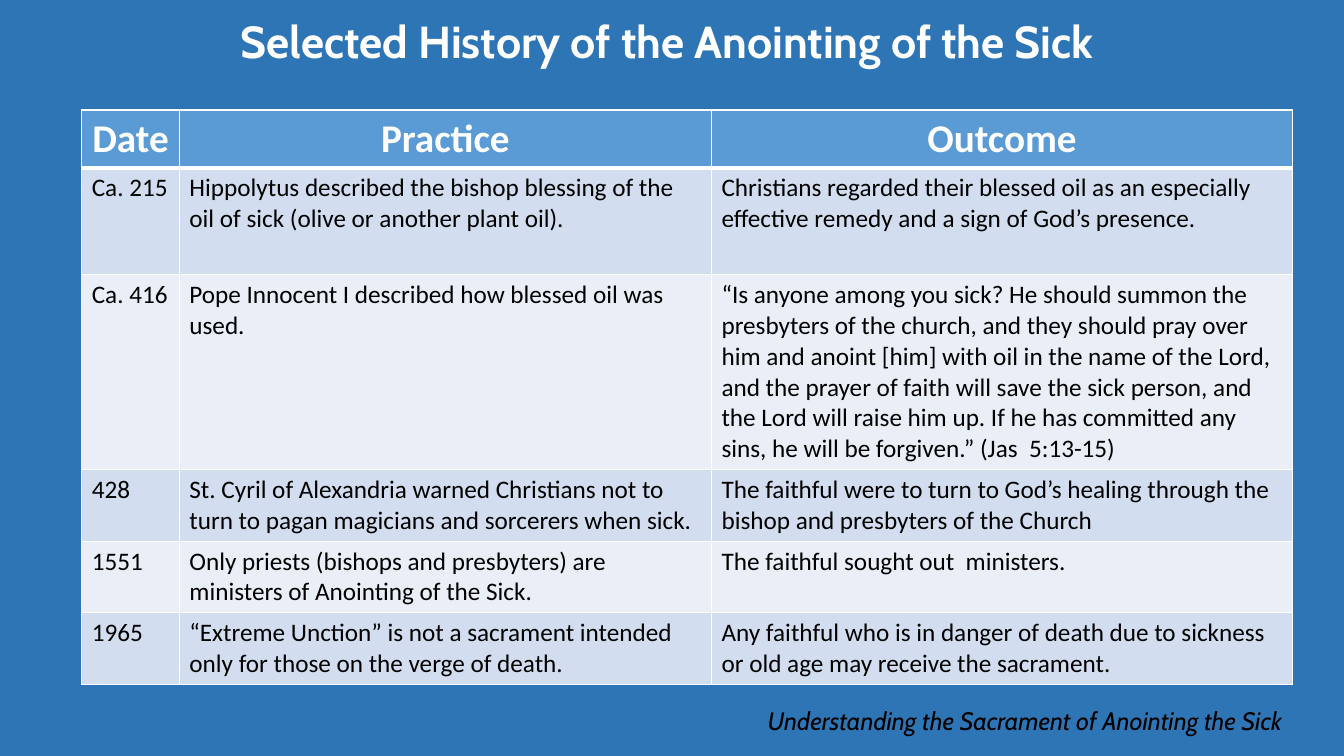
from dataclasses import dataclass

import pptx
import pptx.dml.color
import pptx.enum.text
import pptx.oxml
import pptx.oxml.ns
import pptx.util
from pptx.util import Cm

ALIGN = pptx.enum.text.PP_ALIGN
ANCHOR = pptx.enum.text.MSO_ANCHOR


@dataclass(frozen=True)
class Theme:
    background: str = "2E75B6"
    header: str = "5B9BD5"
    bands: tuple = ("D2DEEF", "EAEFF7")
    light: str = "FFFFFF"
    dark: str = "000000"
    title_font: str = "Cabin"
    table_font: str = "Calibri"
    title_size: int = 32
    header_size: int = 28
    body_size: int = 18


theme = Theme()


def rgb(value):
    return pptx.dml.color.RGBColor.from_string(value)


def write(tf, text, font=theme.table_font, size=theme.body_size, color=theme.dark,
          bold=False, italic=False, align=ALIGN.LEFT, anchor=ANCHOR.TOP):
    tf.word_wrap = True
    tf.vertical_anchor = anchor
    p = tf.paragraphs[0]
    p.alignment = align
    r = p.add_run()
    r.text = text
    r.font.name = font
    r.font.size = pptx.util.Pt(size)
    r.font.bold = bold
    r.font.italic = italic
    r.font.color.rgb = rgb(color)


prs = pptx.Presentation()
prs.slide_width = Cm(33.87)
prs.slide_height = Cm(19.05)
s = prs.slides.add_slide(prs.slide_layouts[5])
s.background.fill.solid()
s.background.fill.fore_color.rgb = rgb(theme.background)

# Title
title = s.shapes.title
title.left, title.top, title.width, title.height = Cm(4.62), Cm(0.2), Cm(24.38), Cm(1.63)
title.text_frame.auto_size = pptx.enum.text.MSO_AUTO_SIZE.NONE
write(title.text_frame, "Selected History of the Anointing of the Sick", font=theme.title_font,
      size=theme.title_size, color=theme.light, bold=True, align=ALIGN.CENTER,
      anchor=ANCHOR.MIDDLE)

# History table
history = [
    ("Date", "Practice", "Outcome"),
    ("Ca. 215",
     "Hippolytus described the bishop blessing of the oil of sick (olive or another plant oil).",
     "Christians regarded their blessed oil as an especially effective remedy and a sign of "
     "God’s presence."),
    ("Ca. 416",
     "Pope Innocent I described how blessed oil was used.",
     "“Is anyone among you sick? He should summon the presbyters of the church, and they should "
     "pray over him and anoint [him] with oil in the name of the Lord, and the prayer of faith "
     "will save the sick person, and the Lord will raise him up. If he has committed any sins, "
     "he will be forgiven.” (Jas  5:13-15)"),
    ("428",
     "St. Cyril of Alexandria warned Christians not to turn to pagan magicians and sorcerers "
     "when sick.",
     "The faithful were to turn to God’s healing through the bishop and presbyters of the Church"),
    ("1551",
     "Only priests (bishops and presbyters) are ministers of Anointing of the Sick.",
     "The faithful sought out  ministers."),
    ("1965",
     "“Extreme Unction” is not a sacrament intended only for those on the verge of death.",
     "Any faithful who is in danger of death due to sickness or old age may receive the "
     "sacrament."),
]
col_widths = [2.46, 13.41, 14.64]
row_heights = [1.46, 2.69, 4.91, 1.8, 1.8, 1.8]
table = s.shapes.add_table(len(history), len(col_widths), Cm(2.06), Cm(2.77),
                           Cm(sum(col_widths)), Cm(sum(row_heights))).table
for column, width in zip(table.columns, col_widths):
    column.width = Cm(width)

for i, (row, height, texts) in enumerate(zip(table.rows, row_heights, history)):
    row.height = Cm(height)
    is_header = i == 0
    for cell, text in zip(row.cells, texts):
        cell.fill.solid()
        if is_header:
            cell.fill.fore_color.rgb = rgb(theme.header)
            write(cell.text_frame, text, size=theme.header_size, color=theme.light,
                  bold=True, align=ALIGN.CENTER)
        else:
            cell.fill.fore_color.rgb = rgb(theme.bands[(i - 1) % 2])
            write(cell.text_frame, text)
        tc_pr = cell._tc.get_or_add_tcPr()
        for position, side in enumerate("LRTB"):
            thick = (i, side) in ((0, "B"), (1, "T"))
            border = pptx.oxml.parse_xml(
                f'<a:ln{side} {pptx.oxml.ns.nsdecls("a")} w="{pptx.util.Pt(3 if thick else 1)}">'
                f'<a:solidFill><a:srgbClr val="{theme.light}"/></a:solidFill></a:ln{side}>')
            tc_pr.insert(position, border)

# Lesson name at the foot
footer = s.shapes.add_textbox(Cm(16.89), Cm(17.65), Cm(15.67), Cm(1.8))
write(footer.text_frame, "Understanding the Sacrament of Anointing the Sick",
      font=theme.title_font, italic=True, align=ALIGN.RIGHT)

prs.save("out.pptx")
